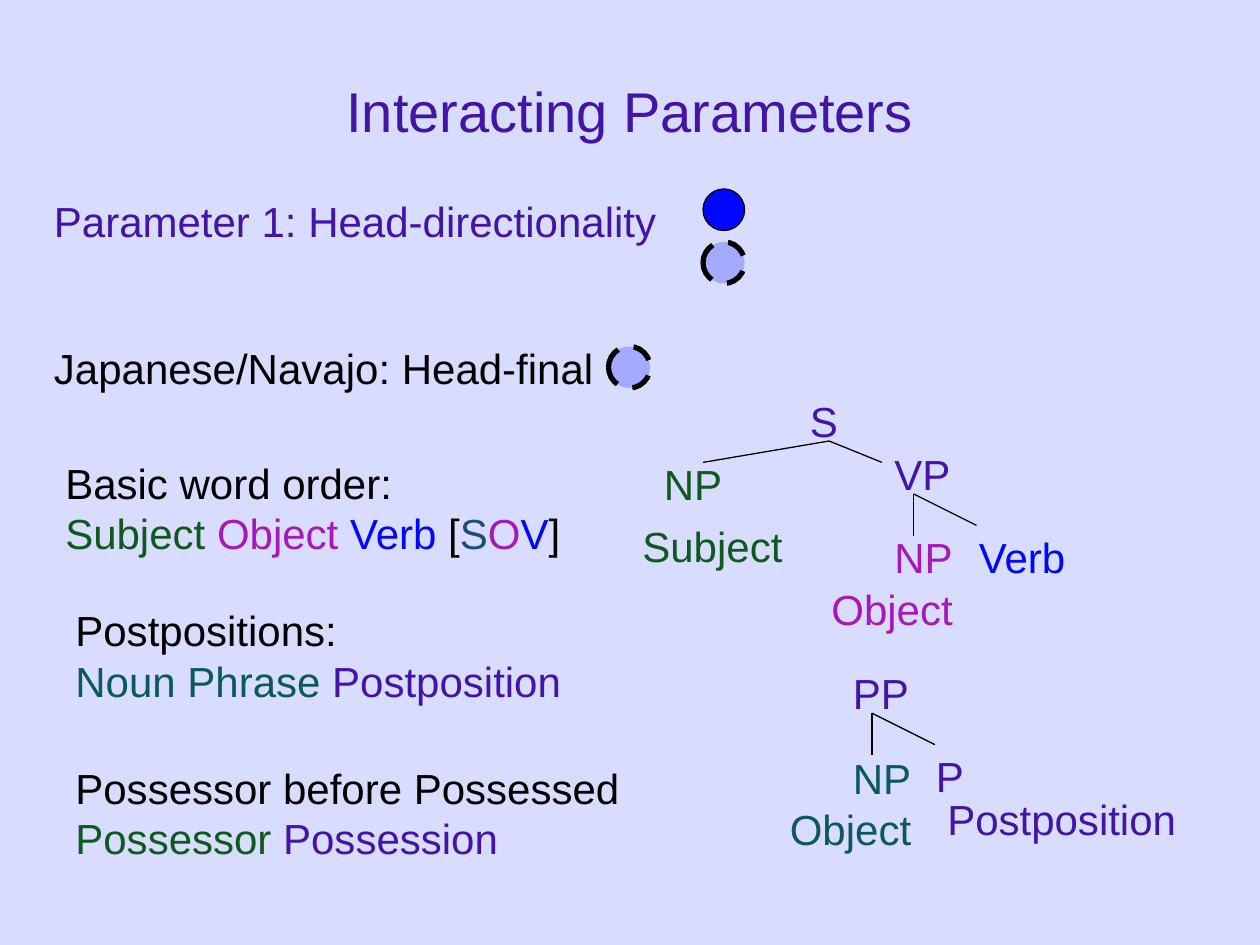
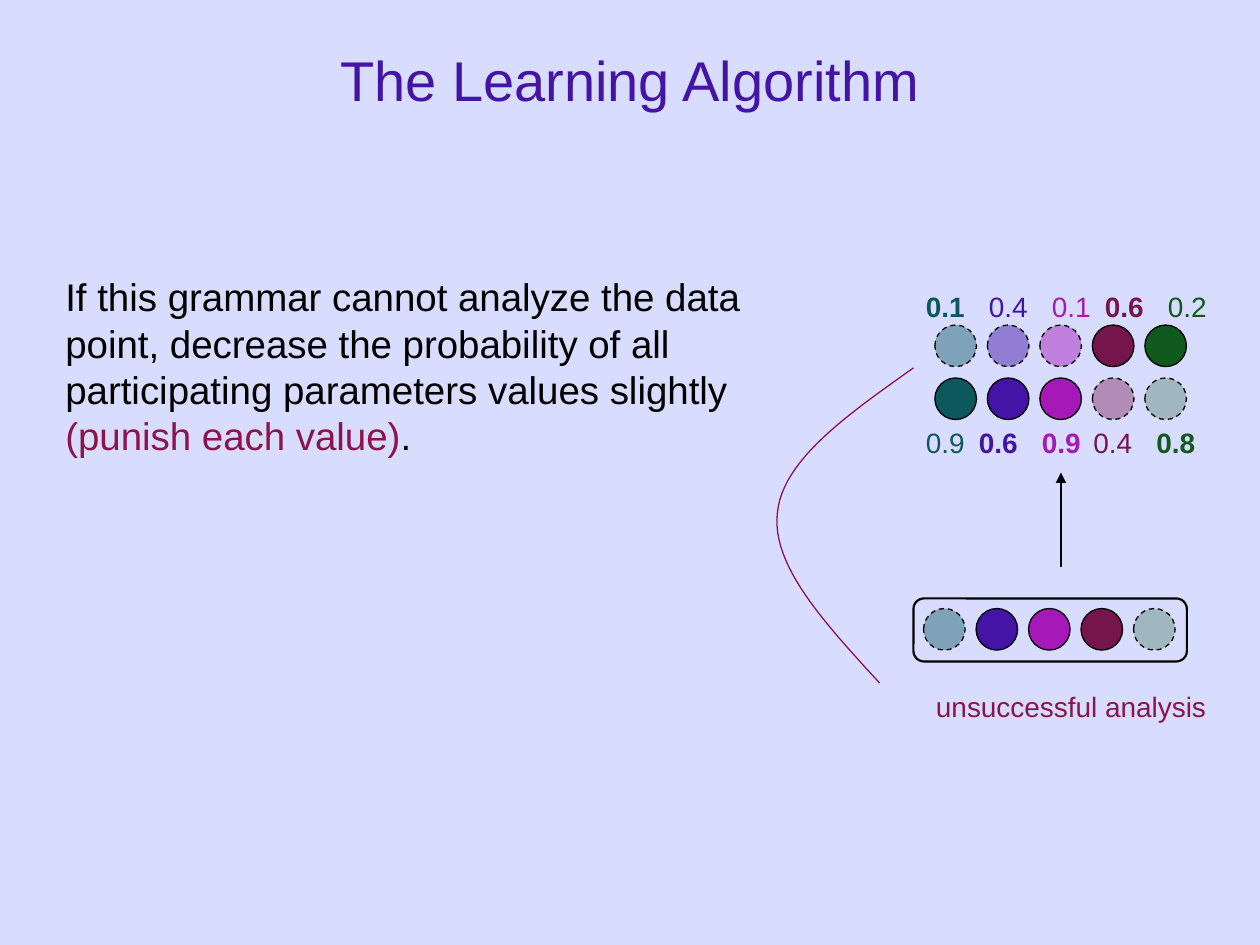
import pptx
import pptx.dml.color
import pptx.enum.dml
import pptx.enum.shapes
import pptx.enum.text
import pptx.oxml.ns
import pptx.util
from lxml import etree
from pptx.util import Inches

COLORS = {
    "background": "D8DCFF", "black": "000000", "violet": "4414A7",
    "green": "0F591E", "magenta": "A519B9", "blue": "0006FF",
    "navy": "204C78", "teal": "0D585D", "maroon": "76154B", "red": "8C144A",
}
FONT = "Arial"
DOT = 0.33
STEP = 5 / 12


def rgb(name):
    return pptx.dml.color.RGBColor.from_string(COLORS[name])


def qn(tag):
    return pptx.oxml.ns.qn(tag)


def add_run(p, text, color="black", size=24, bold=False):
    r = p.add_run()
    r.text = text
    r.font.name = FONT
    r.font.size = pptx.util.Pt(size)
    r.font.bold = bold
    r.font.color.rgb = rgb(color)


def bezier(start, c1, c2, end, steps=24):
    """Points along a cubic curve, without its start."""
    points = []
    for i in range(1, steps + 1):
        t = i / steps
        weights = ((1 - t) ** 3, 3 * t * (1 - t) ** 2, 3 * t * t * (1 - t), t ** 3)
        points.append(tuple(
            sum(w * c for w, c in zip(weights, axis))
            for axis in zip(start, c1, c2, end)))
    return points


class Deck:
    def __init__(self):
        self.prs = pptx.Presentation()
        self.prs.slide_width = Inches(10)
        self.prs.slide_height = Inches(7.5)
        fill = self.prs.slide_master.background.fill
        fill.solid()
        fill.fore_color.rgb = rgb("background")
        self.s = None

    def slide(self, title, left, top, width, height):
        self.s = self.prs.slides.add_slide(self.prs.slide_layouts[5])
        sp = self.s.shapes.title
        sp.left, sp.top = Inches(left), Inches(top)
        sp.width, sp.height = Inches(width), Inches(height)
        tf = sp.text_frame
        tf.vertical_anchor = pptx.enum.text.MSO_ANCHOR.MIDDLE
        p = tf.paragraphs[0]
        p.alignment = pptx.enum.text.PP_ALIGN.CENTER
        add_run(p, title, "violet", 32)

    def text(self, left, top, width, height, *lines, wrap=True, size=24):
        """Each line is a list of (text, colour) runs."""
        sp = self.s.shapes.add_textbox(
            Inches(left), Inches(top), Inches(width), Inches(height))
        tf = sp.text_frame
        tf.word_wrap = wrap
        for i, runs in enumerate(lines):
            p = tf.add_paragraph() if i else tf.paragraphs[0]
            for text, color in runs:
                add_run(p, text, color, size)

    def label(self, text, left, top, color, width=0.66, height=0.5, size=24, bold=False):
        sp = self.s.shapes.add_textbox(
            Inches(left), Inches(top), Inches(width), Inches(height))
        sp.text_frame.word_wrap = False
        add_run(sp.text_frame.paragraphs[0], text, color, size, bold)

    def outline(self, sp, color="black", width=0.75):
        sp.line.color.rgb = rgb(color)
        sp.line.width = pptx.util.Pt(width)

    def dot(self, left, top, color, opacity=None, width=0.75):
        """A circle; one with an opacity is pale and dashed."""
        sp = self.s.shapes.add_shape(
            pptx.enum.shapes.MSO_SHAPE.OVAL,
            Inches(left), Inches(top), Inches(DOT), Inches(DOT))
        sp.shadow.inherit = False
        sp.fill.solid()
        sp.fill.fore_color.rgb = rgb(color)
        self.outline(sp, width=width)
        if opacity:
            sp.line.dash_style = pptx.enum.dml.MSO_LINE.DASH
            clr = sp._element.spPr.find(qn("a:solidFill"))[0]
            etree.SubElement(clr, qn("a:alpha"), val=str(opacity * 1000))

    def frame(self, left, top, width, height):
        sp = self.s.shapes.add_shape(
            pptx.enum.shapes.MSO_SHAPE.ROUNDED_RECTANGLE,
            Inches(left), Inches(top), Inches(width), Inches(height))
        sp.shadow.inherit = False
        sp.fill.background()
        self.outline(sp, width=1.25)

    def line(self, start, end, arrow=False):
        sp = self.s.shapes.add_connector(
            pptx.enum.shapes.MSO_CONNECTOR.STRAIGHT,
            *(Inches(v) for v in start + end))
        self.outline(sp)
        if arrow:
            etree.SubElement(sp.line._get_or_add_ln(), qn("a:tailEnd"), type="triangle")
        etree.SubElement(sp._element.spPr, qn("a:effectLst"))

    def branches(self, top, *ends):
        for end in ends:
            self.line(top, end)

    def curve(self, start, *segments, color):
        points = [start]
        for segment in segments:
            points += bezier(points[-1], *segment)
        emu = [(Inches(x), Inches(y)) for x, y in points]
        builder = self.s.shapes.build_freeform(*emu[0])
        builder.add_line_segments(emu[1:], close=False)
        sp = builder.convert_to_shape()
        sp.shadow.inherit = False
        sp.fill.background()
        self.outline(sp, color)


def interacting_parameters(d):
    d.slide("Interacting Parameters", 0.75, 0.25, 8.5, 1.25)
    d.text(0.33, 1.5, 9.67, 1.31, [("Parameter 1: Head-directionality", "violet")])
    d.text(0.33, 2.67, 5.08, 0.5, [("Japanese/Navajo: Head-final", "black")])
    d.text(0.42, 3.58, 4.17, 0.91, [("Basic word order:", "black")], [
        ("Subject ", "green"), ("Object ", "magenta"), ("Verb ", "blue"),
        ("[", "black"), ("S", "navy"), ("O", "magenta"), ("V", "blue"), ("]", "black")])
    d.text(0.5, 4.75, 4.42, 0.9, [("Postpositions:", "black")],
           [("Noun Phrase ", "teal"), ("Postposition", "violet")])
    d.text(0.5, 6, 4.58, 0.9, [("Possessor before Possessed", "black")],
           [("Possessor ", "green"), ("Possession", "violet")])

    d.label("S", 6.33, 3.09, "violet", width=0.42)
    for text, left, top, color in (
            ("NP", 5.17, 3.59, "green"), ("VP", 7, 3.51, "violet"),
            ("NP", 7, 4.17, "magenta"), ("PP", 6.67, 5.25, "violet"),
            ("NP", 6.67, 5.92, "teal")):
        d.label(text, left, top, color)
    for text, left, top, width, color in (
            ("Object", 6.5, 4.58, 1.42, "magenta"),
            ("Subject", 5, 4.08, 2.58, "green"),
            ("Verb", 7.67, 4.17, 1.08, "blue"),
            ("Object", 6.17, 6.33, 1.42, "teal"),
            ("P", 7.33, 5.91, 1.08, "violet"),
            ("Postposition", 7.42, 6.25, 2.33, "violet")):
        d.text(left, top, width, 0.5, [(text, color)])

    d.branches((6.58, 3.5), (5.58, 3.67), (7, 3.67))
    for x, y in ((7.25, 3.92), (6.92, 5.66)):
        d.branches((x, y), (x, y + 0.33), (x + 0.5, y + 0.25))

    d.dot(5.58, 1.5, "blue")
    for left, top in ((5.58, 1.92), (4.83, 2.75)):
        d.dot(left, top, "blue", opacity=23, width=3)


def learning_algorithm(d):
    d.slide("The Learning Algorithm", 0, 0, 10, 1.25)
    d.text(0.42, 2.12, 6.25, 1.58, [
        ("If this grammar cannot analyze the data point, decrease the probability "
         "of all participating parameters values slightly ", "black"),
        ("(punish each value)", "red"), (".", "black")], size=22)
    d.line((8.42, 4.5), (8.42, 3.75), arrow=True)
    d.label("unsuccessful analysis", 7.33, 5.42, "red", width=2.35, height=0.37, size=16)
    d.curve((6.98, 5.42),
            ((6.55, 4.95), (6.12, 4.49), (6.17, 4.07)),
            ((6.21, 3.65), (6.73, 3.29), (7.25, 2.92)), color="red")
    d.frame(7.25, 4.75, 2.17, 0.5)

    label_tops, dot_tops = (2.25, 3.33), (2.58, 3)
    # colour, pale opacity, solid row, row chosen by the grammar, values, label lefts
    parameters = (
        ("teal", 44, 1, 0, ("0.1", "0.9"), (7.25, 7.25)),
        ("violet", 47, 1, 1, ("0.4", "0.6"), (7.75, 7.67)),
        ("magenta", 47, 1, 1, ("0.1", "0.9"), (8.25, 8.17)),
        ("maroon", 40, 0, 0, ("0.6", "0.4"), (8.67, 8.58)),
        ("green", 28, 0, 1, ("0.2", "0.8"), (9.17, 9.08)),
    )
    for i, (color, pale, solid, chosen, values, lefts) in enumerate(parameters):
        for row in (0, 1):
            opacity = None if row == solid else pale
            d.label(values[row], lefts[row], label_tops[row], color,
                    width=0.51, height=0.37, size=16, bold=row == chosen)
            d.dot(7.42 + i * STEP, dot_tops[row], color, opacity)
            if row == chosen:
                d.dot(7.33 + i * STEP, 4.83, color, opacity)


def main():
    d = Deck()
    interacting_parameters(d)
    learning_algorithm(d)
    d.prs.save("out.pptx")


if __name__ == "__main__":
    main()
